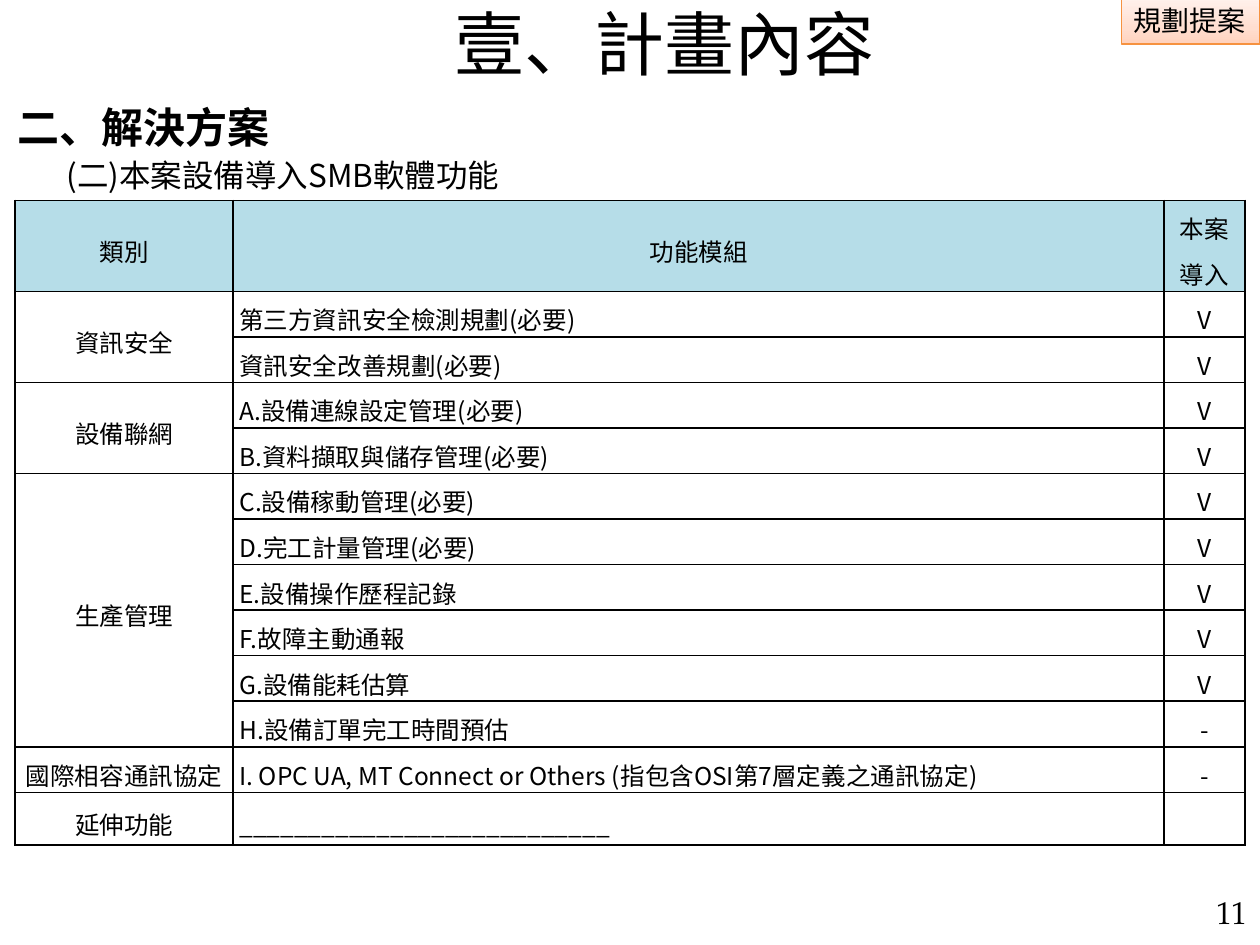
import pptx
import pptx.enum.shapes
import pptx.enum.text
import pptx.oxml
import pptx.oxml.ns
import pptx.util
from lxml import etree
from pptx.dml.color import RGBColor
from pptx.util import Inches

COLORS = {"ink": "000000", "header": "B6DDE8", "badge_line": "F69240"}
BADGE_STOPS = [(0, "FFD2BD"), (35, "FFDED0"), (100, "FFF2ED")]
CJK = "Noto Sans CJK SC"
SERIF = "TeX Gyre Pagella"
ALIGN = pptx.enum.text.PP_ALIGN
ANCHOR = pptx.enum.text.MSO_ANCHOR

HEADERS = ["類別", "功能模組", "本案\v導入"]
GROUPS = [
    ("資訊安全", [("第三方資訊安全檢測規劃(必要)", "V"), ("資訊安全改善規劃(必要)", "V")]),
    ("設備聯網", [("A.設備連線設定管理(必要)", "V"), ("B.資料擷取與儲存管理(必要)", "V")]),
    ("生產管理", [
        ("C.設備稼動管理(必要)", "V"),
        ("D.完工計量管理(必要)", "V"),
        ("E.設備操作歷程記錄", "V"),
        ("F.故障主動通報", "V"),
        ("G.設備能耗估算", "V"),
        ("H.設備訂單完工時間預估", "-"),
    ]),
    ("國際相容通訊協定", [("I. OPC UA, MT Connect or Others (指包含OSI第7層定義之通訊協定)", "-")]),
    ("延伸功能", [("_" * 27, "")]),
]


def write(frame, text, size, align=ALIGN.LEFT, font=CJK, bold=False, spacing=None):
    frame.text = text
    para = frame.paragraphs[0]
    para.alignment = align
    if spacing:
        para.line_spacing = pptx.util.Pt(spacing)
    for span in para.runs:
        span.font.size = pptx.util.Pt(size)
        span.font.name = font
        span.font.bold = bold
        span.font.color.rgb = RGBColor.from_string(COLORS["ink"])
        east = etree.SubElement(span.font._element, pptx.oxml.ns.qn("a:ea"))
        east.set("typeface", font)


def add_text(page, box, text, size, anchor=ANCHOR.TOP, **style):
    shape = page.shapes.add_textbox(*map(Inches, box))
    shape.text_frame.word_wrap = True
    shape.text_frame.vertical_anchor = anchor
    write(shape.text_frame, text, size, **style)


def add_badge(page, box):
    badge = page.shapes.add_shape(
        pptx.enum.shapes.MSO_SHAPE.RECTANGLE, *map(Inches, box))
    badge.shadow.inherit = False
    badge.line.color.rgb = RGBColor.from_string(COLORS["badge_line"])
    badge.line.width = pptx.util.Pt(0.75)
    # Three-stop gradient, darkest at the bottom
    badge.fill.gradient()
    badge.fill.gradient_angle = 90
    stops = badge._element.spPr.find(".//" + pptx.oxml.ns.qn("a:gsLst"))
    for stop in list(stops):
        stops.remove(stop)
    for position, color in BADGE_STOPS:
        stop = etree.SubElement(stops, pptx.oxml.ns.qn("a:gs"), pos=str(position * 1000))
        etree.SubElement(stop, pptx.oxml.ns.qn("a:srgbClr"), val=color)
    badge.text_frame.word_wrap = False
    badge.text_frame.vertical_anchor = ANCHOR.TOP
    write(badge.text_frame, "規劃提案", 16)


def add_headings(page, box):
    left, top, width, height = box
    title = page.shapes.title
    title.left, title.top = Inches(left + 1.93), Inches(top)
    title.width, title.height = Inches(6.69), Inches(0.68)
    title.text_frame.vertical_anchor = ANCHOR.MIDDLE
    write(title.text_frame, "壹、計畫內容", 40, align=ALIGN.CENTER)
    add_text(page, (left + 0.04, top + 0.76, width - 0.39, 0.63), "二、解決方案", 24, bold=True)
    add_text(page, (left + 0.43, top + height - 0.4, 8.19, 0.4),
             "(二)本案設備導入SMB軟體功能", 18)


def format_cell(cell, text, align, fill=None):
    cell.margin_left = cell.margin_right = Inches(0.05)
    cell.margin_top = cell.margin_bottom = 0
    cell.vertical_anchor = ANCHOR.MIDDLE
    write(cell.text_frame, text, 14, align=align, spacing=26)
    # Borders come before the fill in the cell properties
    properties = cell._tc.get_or_add_tcPr()
    for side in ("lnL", "lnR", "lnT", "lnB"):
        line = etree.SubElement(properties, pptx.oxml.ns.qn("a:" + side), w="12700")
        solid = etree.SubElement(line, pptx.oxml.ns.qn("a:solidFill"))
        etree.SubElement(solid, pptx.oxml.ns.qn("a:srgbClr"), val=COLORS["ink"])
    if fill:
        cell.fill.solid()
        cell.fill.fore_color.rgb = RGBColor.from_string(fill)
    else:
        cell.fill.background()


def add_module_table(page, box):
    row_count = 1 + sum(len(modules) for _, modules in GROUPS)
    table = page.shapes.add_table(row_count, 3, *map(Inches, box)).table
    table.first_row = table.horz_banding = False
    for column, width in zip(table.columns, (1.73, 7.39, 0.64)):
        column.width = Inches(width)
    heights = [0.72] + [0.36] * (row_count - 2) + [0.42]
    for row, height in zip(table.rows, heights):
        row.height = Inches(height)

    # Header row
    for index, label in enumerate(HEADERS):
        format_cell(table.cell(0, index), label, ALIGN.CENTER, COLORS["header"])

    # One merged category cell for each group of modules
    first = 1
    for category, modules in GROUPS:
        for row, (module, adopted) in enumerate(modules, first):
            format_cell(table.cell(row, 0), category if row == first else "", ALIGN.CENTER)
            format_cell(table.cell(row, 1), module, ALIGN.JUSTIFY)
            format_cell(table.cell(row, 2), adopted, ALIGN.CENTER)
        last = first + len(modules) - 1
        if last > first:
            table.cell(first, 0).merge(table.cell(last, 0))
        first = last + 1


def main():
    deck = pptx.Presentation()
    deck.slide_width, deck.slide_height = Inches(10), Inches(7.5)
    page = deck.slides.add_slide(deck.slide_layouts[5])
    add_badge(page, (8.9, -0.02, 1.1, 0.37))
    add_text(page, (9.14, 7.11, 0.86, 0.39), "11", 18, anchor=ANCHOR.MIDDLE,
             align=ALIGN.RIGHT, font=SERIF, spacing=12)
    add_headings(page, (0, 0, 10, 1.59))
    add_module_table(page, (0.12, 1.59, 9.76, 5.1))
    deck.save("out.pptx")


if __name__ == "__main__":
    main()
